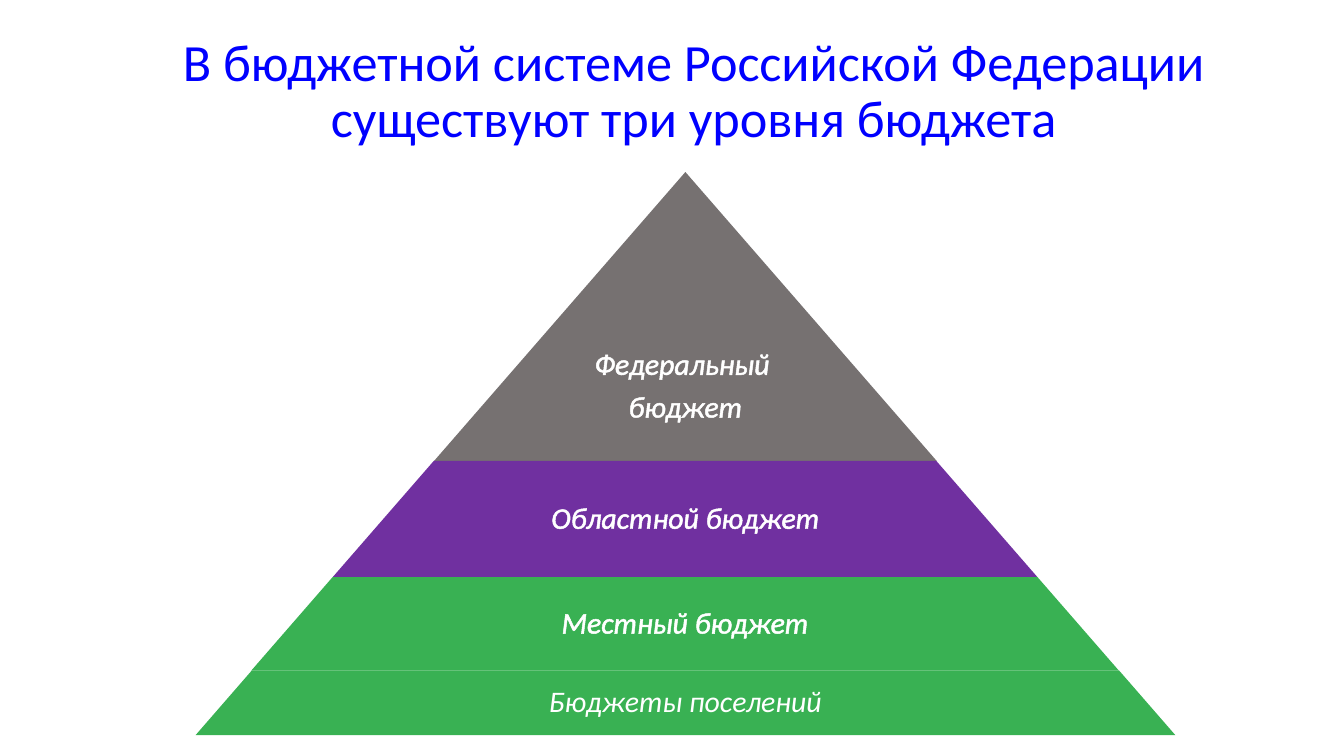
from lxml import etree
from pptx import Presentation
from pptx.dml.color import RGBColor
from pptx.enum.shapes import MSO_SHAPE
from pptx.enum.text import MSO_ANCHOR, PP_ALIGN
from pptx.oxml.ns import qn
from pptx.util import Emu, Pt

PX = 4572  # 200 px to the inch
FONT = "Calibri"
WHITE = "FFFFFF"
TRAPEZOID = MSO_SHAPE.TRAPEZOID
MIDDLE, BOTTOM = MSO_ANCHOR.MIDDLE, MSO_ANCHOR.BOTTOM
CENTER = PP_ALIGN.CENTER

SLOPE = 0.87  # half the width gained per unit of depth
TITLE = "В бюджетной системе Российской Федерации существуют три уровня бюджета"
# label, height, fill, label width as a share of the tier, bold outline, bottom inset
TIERS = [
    ("Федеральный \nбюджет", 430, "767171", 1, True, 55),
    ("Областной бюджет", 173, "7030A0", 0.65, True, 4),
    ("Местный бюджет", 139, "39B153", 0.65, True, 4),
    ("Бюджеты поселений", 96, "39B153", 0.65, False, 4),
]


def px(length):
    return Emu(round(length) * PX)


def color(value):
    return RGBColor.from_string(value)


def outline_text(span, value):
    line = etree.Element(qn("a:ln"), w=str(Pt(1.45)))
    fill = etree.SubElement(line, qn("a:solidFill"))
    etree.SubElement(fill, qn("a:srgbClr"), val=value)
    span._r.get_or_add_rPr().insert(0, line)


def add_text(page, box, text, size, ink, anchor=MIDDLE, insets=(4, 4, 4, 4),
             gap=0, italic=False, outlined=False):
    """Add centred text; insets run left, top, right, bottom."""
    frame = page.shapes.add_textbox(*map(px, box)).text_frame
    frame.word_wrap = True
    frame.vertical_anchor = anchor
    (frame.margin_left, frame.margin_top,
     frame.margin_right, frame.margin_bottom) = map(px, insets)
    frame.text = text
    for para in frame.paragraphs:
        para.alignment = CENTER
        para.line_spacing = 0.9
        para.space_after = Pt(gap)
        para.font.name = FONT
        para.font.size = Pt(size)
        para.font.italic = italic
        para.font.color.rgb = color(ink)
        if outlined:
            for span in para.runs:
                outline_text(span, ink)


def add_tier(page, box, label, fill, label_share, outlined, bottom_inset):
    left, top, width, height = box
    tier = page.shapes.add_shape(TRAPEZOID, *map(px, box))
    tier.adjustments[0] = SLOPE
    tier.shadow.inherit = False
    tier.fill.solid()
    tier.fill.fore_color.rgb = color(fill)
    tier.line.fill.background()

    label_width = width * label_share
    label_box = (left + (width - label_width) / 2, top, label_width, height)
    anchor = BOTTOM if "\n" in label else MIDDLE
    add_text(page, label_box, label, 16, WHITE, anchor, (4, 4, 4, bottom_inset),
             gap=5.6, italic=True, outlined=outlined)


def add_pyramid(page, center, top):
    depth = 0
    for label, height, fill, label_share, outlined, bottom_inset in TIERS:
        half = SLOPE * (depth + height)
        box = (center - half, top + depth, 2 * half, height)
        add_tier(page, box, label, fill, label_share, outlined, bottom_inset)
        depth += height


def main():
    deck = Presentation()
    deck.slide_width, deck.slide_height = px(2000), px(1125)
    page = deck.slides.add_slide(deck.slide_layouts[6])
    add_text(page, (150, 20, 1764, 235), TITLE, 28, "0000FF", insets=(20, 10, 20, 10))
    add_pyramid(page, center=1020, top=256)
    deck.save("out.pptx")


if __name__ == "__main__":
    main()
